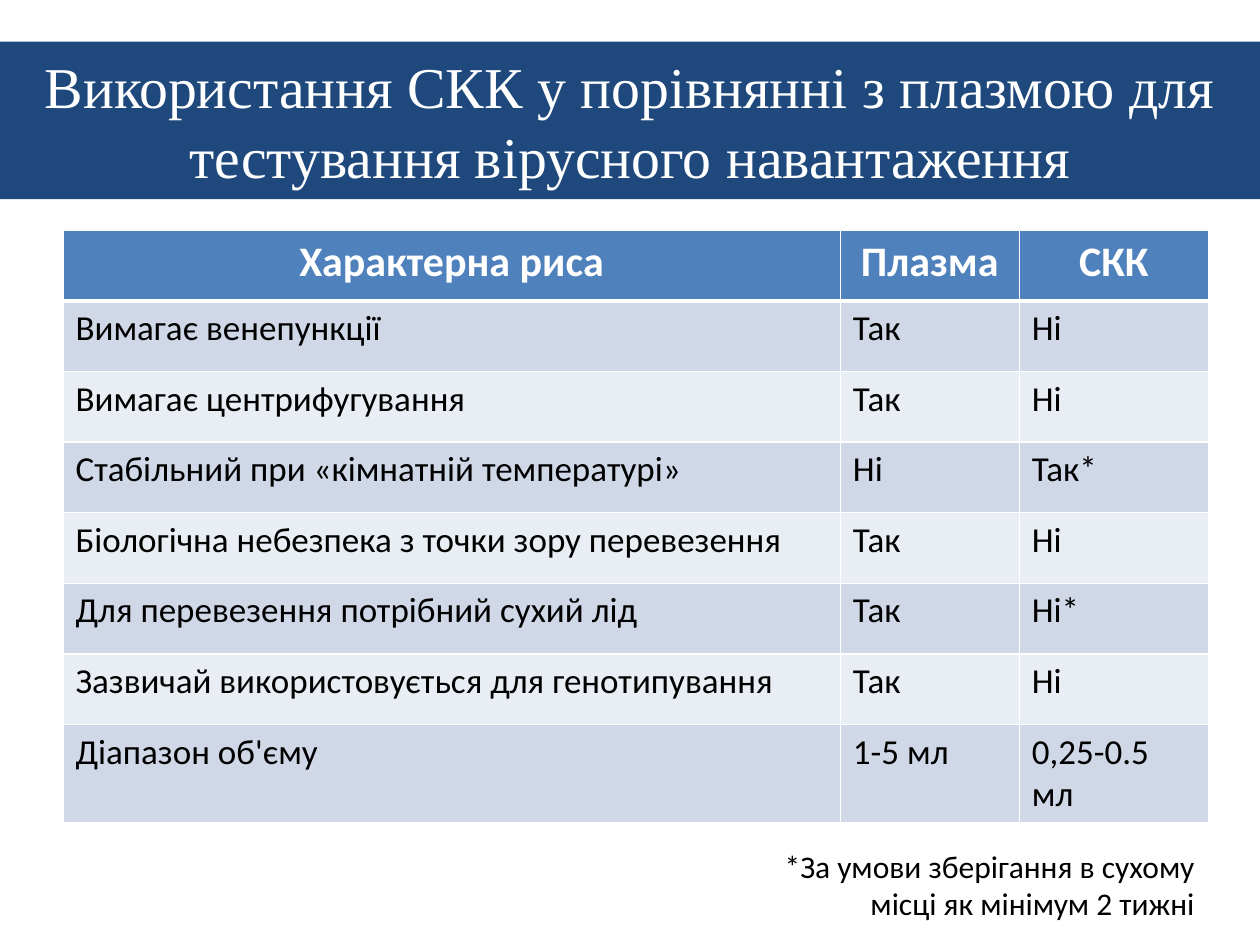
from dataclasses import dataclass

from lxml.etree import SubElement
from pptx import Presentation
from pptx.dml.color import RGBColor
from pptx.enum.text import MSO_ANCHOR, MSO_AUTO_SIZE, PP_ALIGN
from pptx.oxml.ns import qn
from pptx.util import Inches, Pt


@dataclass(frozen=True)
class Theme:
    navy: str = "1F497D"
    blue: str = "4F81BD"
    bands: tuple = ("D0D8E8", "E9EDF4")
    white: str = "FFFFFF"
    black: str = "000000"
    title_font: str = "Times New Roman"
    body_font: str = "Calibri"
    title_size: int = 33
    header_size: int = 24
    body_size: int = 20
    note_size: int = 18


THEME = Theme()
SLIDE_WIDTH, SLIDE_HEIGHT = 10, 7.5
COLUMN_WIDTHS = (6.17, 1.42, 1.5)
ROW_HEIGHT = 0.56
TITLE = "Використання СКК у порівнянні з плазмою для тестування вірусного навантаження"
NOTE = "*За умови зберігання в сухому місці як мінімум 2 тижні"
ROWS = (
    ("Характерна риса", "Плазма", "СКК"),
    ("Вимагає венепункції", "Так", "Ні"),
    ("Вимагає центрифугування", "Так", "Ні"),
    ("Стабільний при «кімнатній температурі»", "Ні", "Так*"),
    ("Біологічна небезпека з точки зору перевезення", "Так", "Ні"),
    ("Для перевезення потрібний сухий лід", "Так", "Ні*"),
    ("Зазвичай використовується для генотипування", "Так", "Ні"),
    ("Діапазон об'єму", "1-5 мл", "0,25-0.5 мл"),
)


def write_text(frame, text, size, color=THEME.black, font=THEME.body_font,
               bold=False, align=PP_ALIGN.LEFT):
    paragraph = frame.paragraphs[0]
    paragraph.alignment = align
    run = paragraph.add_run()
    run.text = text
    run.font.name = font
    run.font.size = Pt(size)
    run.font.bold = bold
    run.font.color.rgb = RGBColor.from_string(color)


def fill_solid(target, color):
    target.fill.solid()
    target.fill.fore_color.rgb = RGBColor.from_string(color)


def set_borders(cell, bottom=1, top=1):
    """Draw white cell borders; the widths are in points."""
    properties = cell._tc.get_or_add_tcPr()
    widths = {"lnL": 1, "lnR": 1, "lnT": top, "lnB": bottom}
    for position, (side, width) in enumerate(widths.items()):
        line = SubElement(properties, qn(f"a:{side}"), w=str(Pt(width)))
        fill = SubElement(line, qn("a:solidFill"))
        SubElement(fill, qn("a:srgbClr"), val=THEME.white)
        properties.insert(position, line)  # borders precede the fill


def add_title(slide):
    title = slide.shapes.title
    title.left, title.top = 0, Inches(0.33)
    title.width, title.height = Inches(SLIDE_WIDTH), Inches(1.25)
    fill_solid(title, THEME.navy)
    frame = title.text_frame
    frame.vertical_anchor = MSO_ANCHOR.MIDDLE
    write_text(frame, TITLE, THEME.title_size, color=THEME.white,
               font=THEME.title_font, align=PP_ALIGN.CENTER)


def add_comparison_table(slide):
    table = slide.shapes.add_table(
        len(ROWS), len(COLUMN_WIDTHS), Inches(0.5), Inches(1.83),
        Inches(sum(COLUMN_WIDTHS)), Inches(ROW_HEIGHT * len(ROWS))).table
    for column, width in zip(table.columns, COLUMN_WIDTHS):
        column.width = Inches(width)
    for row_index, values in enumerate(ROWS):
        table.rows[row_index].height = Inches(ROW_HEIGHT)
        for column_index, value in enumerate(values):
            cell = table.cell(row_index, column_index)
            if row_index == 0:
                fill_solid(cell, THEME.blue)
                set_borders(cell, bottom=3)
                write_text(cell.text_frame, value, THEME.header_size,
                           color=THEME.white, bold=True, align=PP_ALIGN.CENTER)
            else:
                fill_solid(cell, THEME.bands[(row_index - 1) % 2])
                set_borders(cell, top=3 if row_index == 1 else 1)
                write_text(cell.text_frame, value, THEME.body_size)


def add_note(slide):
    box = slide.shapes.add_textbox(Inches(6), Inches(6.67), Inches(3.58), Inches(0.4))
    frame = box.text_frame
    frame.word_wrap = True
    frame.auto_size = MSO_AUTO_SIZE.SHAPE_TO_FIT_TEXT
    write_text(frame, NOTE, THEME.note_size, align=PP_ALIGN.RIGHT)


def main():
    presentation = Presentation()
    presentation.slide_width = Inches(SLIDE_WIDTH)
    presentation.slide_height = Inches(SLIDE_HEIGHT)
    title_only = presentation.slide_layouts[5]
    slide = presentation.slides.add_slide(title_only)
    add_title(slide)
    add_comparison_table(slide)
    add_note(slide)
    presentation.save("out.pptx")


if __name__ == "__main__":
    main()
